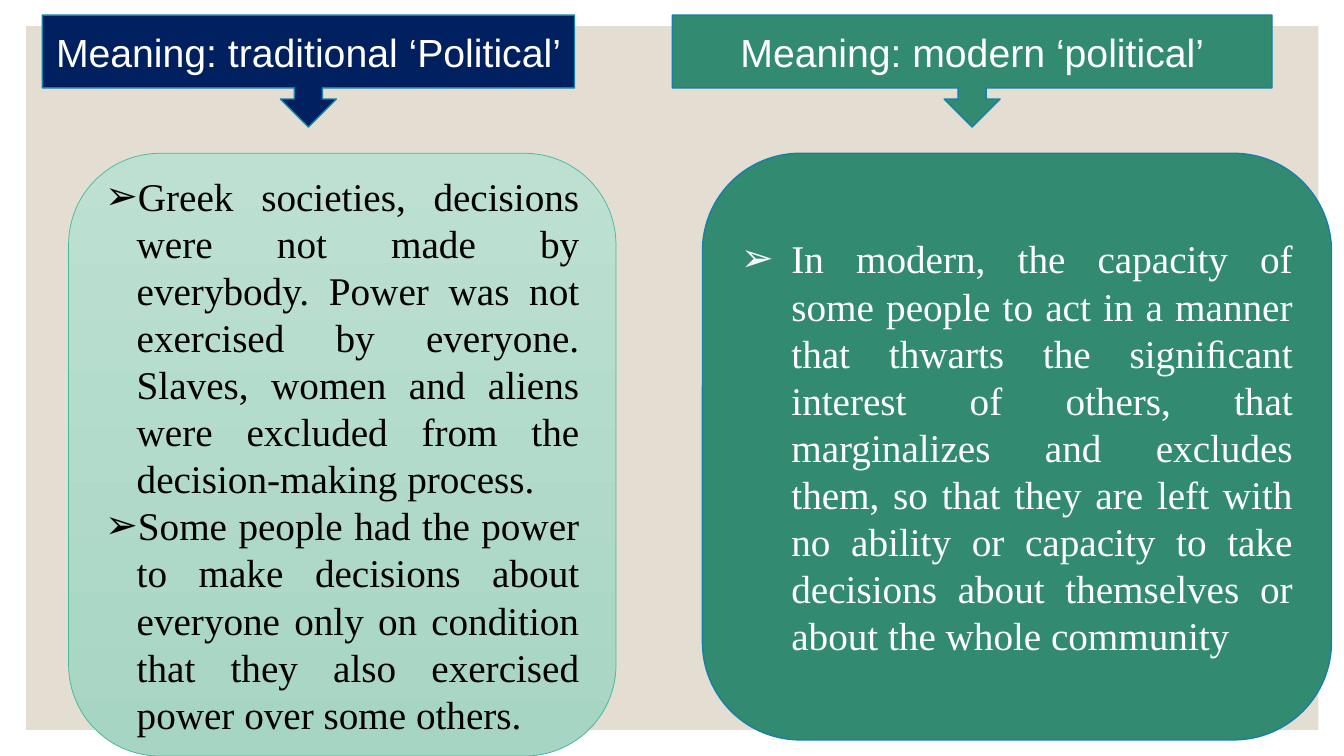
"""Build a slide that sets the traditional meaning of 'political' beside the modern one."""

from dataclasses import dataclass

from lxml.etree import SubElement
from pptx import Presentation
from pptx.dml.color import RGBColor as Color
from pptx.enum.shapes import MSO_SHAPE as Preset
from pptx.enum.text import MSO_ANCHOR as Anchor, PP_ALIGN as Align
from pptx.oxml.ns import qn
from pptx.shapes.autoshape import Shape
from pptx.slide import Slide
from pptx.util import Pt


@dataclass(frozen=True)
class Theme:
    paper: str = "FFFFFF"
    panel: str = "E3DED1"
    navy: str = "002060"
    green: str = "328B71"
    mint_top: str = "BDE0D2"
    mint_bottom: str = "A7D5C4"
    mint_edge: str = "42BA97"
    blue_edge: str = "1580A9"
    light: str = "FFFFFF"
    dark: str = "000000"
    heading_font: str = "Arial"
    body_font: str = "Times New Roman"
    text_size: float = 28


@dataclass(frozen=True)
class Frame:
    left: float
    top: float
    width: float
    height: float


@dataclass(frozen=True)
class Style:
    fills: tuple[str, ...]
    edge: str
    edge_width: float
    ink: str
    font: str


@dataclass(frozen=True)
class Column:
    heading: str
    heading_frame: Frame
    heading_style: Style
    points: tuple[str, ...]
    body_frame: Frame
    body_style: Style
    indent: float


THEME = Theme()
PANEL = Frame(18.7, 18.7, 923, 502.6)
COLUMNS = (
    Column(
        "Meaning: traditional ‘Political’",
        Frame(30.2, 10.8, 380.2, 80),
        Style((THEME.navy,), THEME.blue_edge, 1, THEME.light, THEME.heading_font),
        (
            "Greek societies, decisions were not made by everybody. Power was not "
            "exercised by everyone. Slaves, women and aliens were excluded from the "
            "decision-making process.",
            "Some people had the power to make decisions about everyone only on "
            "condition that they also exercised power over some others.",
        ),
        Frame(49, 109.5, 391, 430.5),
        Style((THEME.mint_top, THEME.mint_bottom), THEME.mint_edge, 0.5,
              THEME.dark, THEME.body_font),
        22.5,
    ),
    Column(
        "Meaning: modern ‘political’",
        Frame(480.2, 10.8, 428.4, 80),
        Style((THEME.green,), THEME.blue_edge, 1, THEME.light, THEME.heading_font),
        (
            "In modern, the capacity of some people to act in a manner that thwarts "
            "the signiﬁcant interest of others, that marginalizes and excludes them, "
            "so that they are left with no ability or capacity to take decisions "
            "about themselves or about the whole community",
        ),
        Frame(501.8, 109.5, 449.3, 419),
        Style((THEME.green,), THEME.blue_edge, 1, THEME.light, THEME.body_font),
        36,
    ),
)


def add_box(page: Slide, preset: Preset, frame: Frame, fills: tuple[str, ...]) -> Shape:
    """Add a shadowless preset shape with a solid or a top-down gradient fill."""
    box = page.shapes.add_shape(
        preset, Pt(frame.left), Pt(frame.top), Pt(frame.width), Pt(frame.height)
    )
    box.shadow.inherit = False
    if len(fills) == 1:
        box.fill.solid()
        box.fill.fore_color.rgb = Color.from_string(fills[0])
    else:
        box.fill.gradient()
        box.fill.gradient_angle = 270
        for stop, colour in zip(box.fill.gradient_stops, fills):
            stop.color.rgb = Color.from_string(colour)
    return box


def add_text_box(page: Slide, preset: Preset, frame: Frame, style: Style,
                 texts: tuple[str, ...], indent: float = 0) -> None:
    """Add an outlined shape whose paragraphs are bulleted when an indent is given."""
    box = add_box(page, preset, frame, style.fills)
    box.line.color.rgb = Color.from_string(style.edge)
    box.line.width = Pt(style.edge_width)
    text_frame = box.text_frame
    text_frame.word_wrap = True
    text_frame.vertical_anchor = Anchor.MIDDLE
    for index, text in enumerate(texts):
        para = text_frame.add_paragraph() if index else text_frame.paragraphs[0]
        para.alignment = Align.JUSTIFY if indent else Align.CENTER
        span = para.add_run()
        span.text = text
        span.font.name = style.font
        span.font.size = Pt(THEME.text_size)
        span.font.color.rgb = Color.from_string(style.ink)
        if indent:
            properties = para._p.get_or_add_pPr()
            properties.set("marL", str(Pt(indent)))
            properties.set("indent", str(-Pt(indent)))
            SubElement(properties, qn("a:buFont")).set("typeface", THEME.heading_font)
            SubElement(properties, qn("a:buChar")).set("char", "➢")


def add_column(page: Slide, column: Column) -> None:
    """Draw a heading callout and the rounded box below it."""
    add_text_box(page, Preset.DOWN_ARROW_CALLOUT, column.heading_frame,
                 column.heading_style, (column.heading,))
    add_text_box(page, Preset.ROUNDED_RECTANGLE, column.body_frame,
                 column.body_style, column.points, column.indent)


def main() -> None:
    """Create the deck and save it."""
    deck = Presentation()
    deck.slide_width, deck.slide_height = Pt(960), Pt(540)
    page = deck.slides.add_slide(deck.slide_layouts[6])
    page.background.fill.solid()
    page.background.fill.fore_color.rgb = Color.from_string(THEME.paper)
    panel = add_box(page, Preset.RECTANGLE, PANEL, (THEME.panel,))
    panel.line.fill.background()
    for column in COLUMNS:
        add_column(page, column)
    deck.save("out.pptx")


if __name__ == "__main__":
    main()
